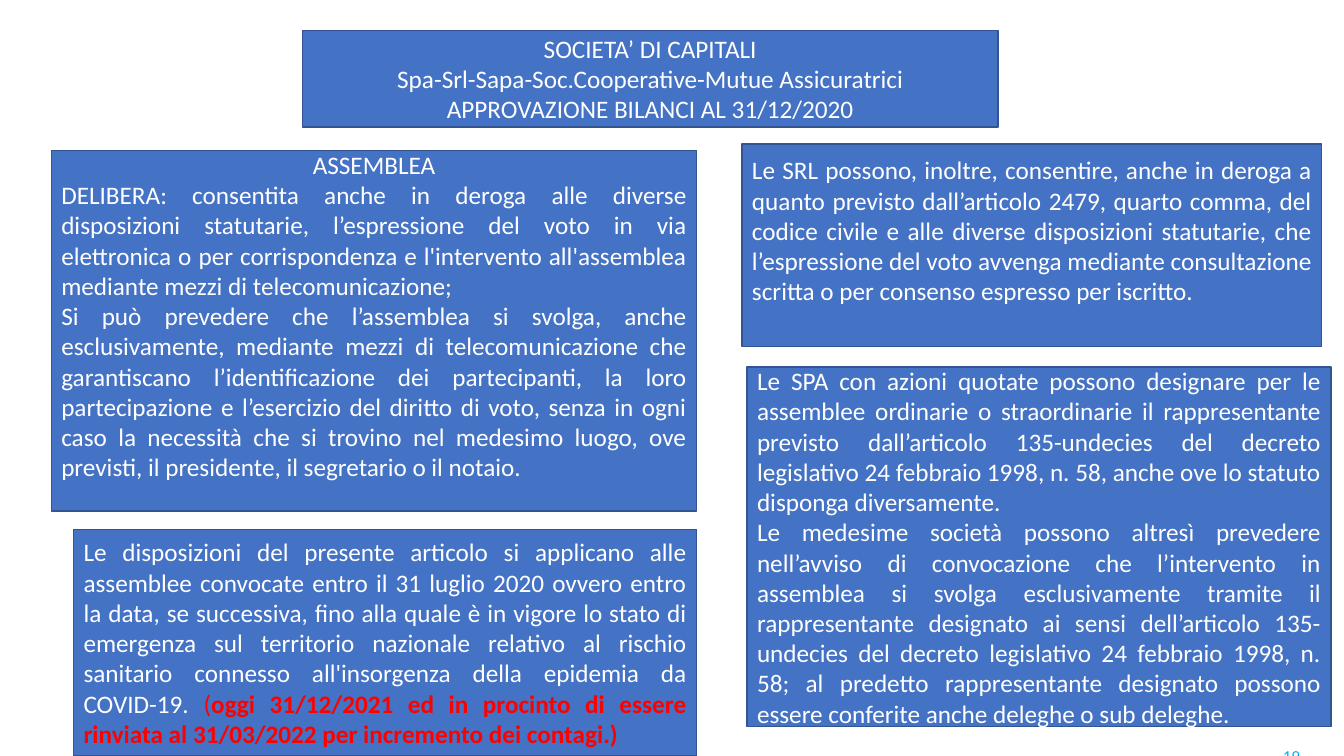
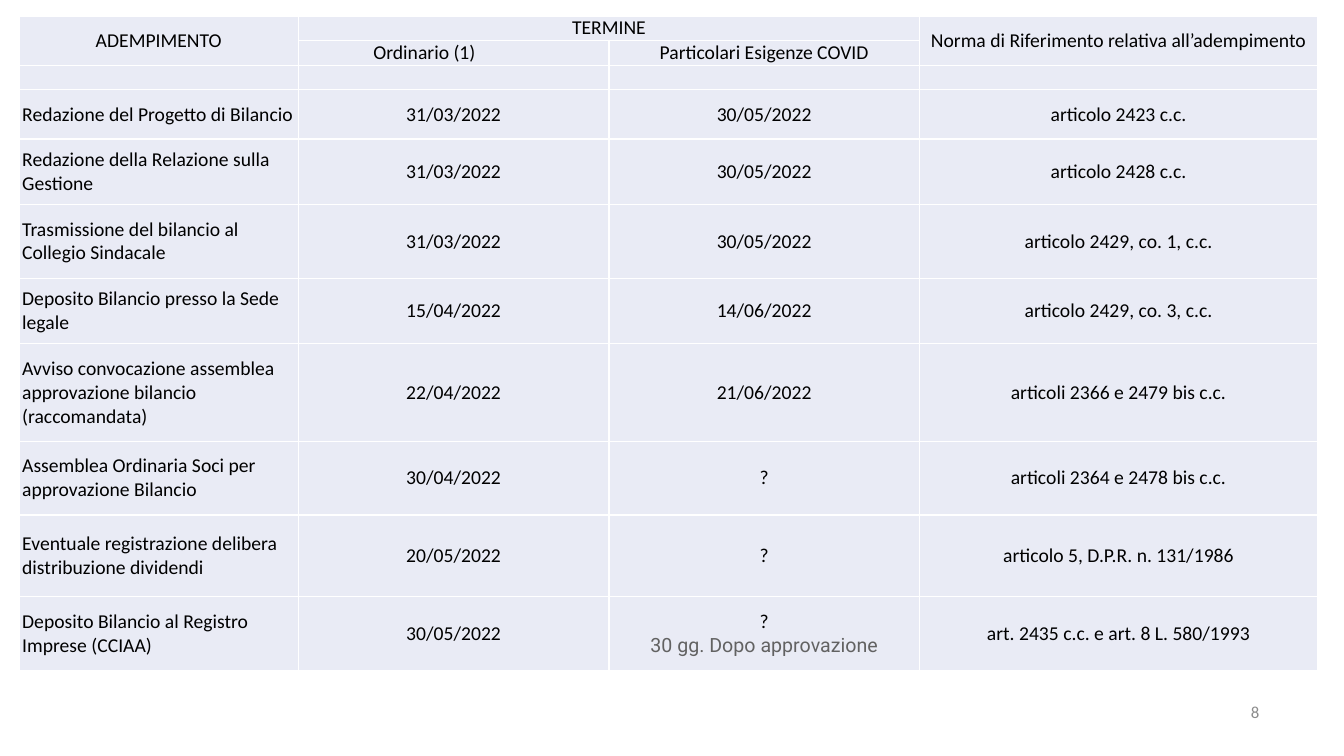
from dataclasses import dataclass

from lxml.etree import SubElement
from pptx import Presentation
from pptx.dml.color import RGBColor
from pptx.enum.shapes import MSO_SHAPE
from pptx.enum.text import MSO_ANCHOR, PP_ALIGN
from pptx.oxml.ns import qn
from pptx.slide import Slide
from pptx.table import Table, _Cell
from pptx.text.text import TextFrame, _Paragraph
from pptx.util import Inches, Pt

BLUE = "4472C4"
BLUE_EDGE = "325491"
WHITE = "FFFFFF"
BLACK = "000000"
RED = "FF0000"
CYAN = "00B0F0"
GREY = "8C8C8C"
NOTE_GREY = "626262"
CELL_FILL = "E9EBF5"
FONT = "Calibri"
TABLE_SIZE = 14

CENTER, JUSTIFY = PP_ALIGN.CENTER, PP_ALIGN.JUSTIFY
LEFT, RIGHT = PP_ALIGN.LEFT, PP_ALIGN.RIGHT


@dataclass(frozen=True)
class Span:
    text: str
    color: str = WHITE
    bold: bool = False


@dataclass(frozen=True)
class Para:
    spans: tuple[Span, ...]
    align: PP_ALIGN = JUSTIFY


@dataclass(frozen=True)
class Panel:
    left: float
    top: float
    width: float
    height: float
    paras: tuple[Para, ...]
    bottom_inset: float = 0.05


@dataclass(frozen=True)
class Deadline:
    task: str
    ordinary: str
    covid: str
    rule: str
    height: float
    covid_note: str = ""


def plain(text: str, align: PP_ALIGN = JUSTIFY) -> Para:
    return Para((Span(text),), align)


PANELS = (
    Panel(3, 0.3, 6.9, 0.96, (
        plain("SOCIETA’ DI CAPITALI", CENTER),
        plain("Spa-Srl-Sapa-Soc.Cooperative-Mutue Assicuratrici", CENTER),
        plain("APPROVAZIONE BILANCI AL 31/12/2020", CENTER),
    )),
    Panel(0.51, 1.49, 6.4, 3.58, (
        plain("ASSEMBLEA", CENTER),
        plain("DELIBERA: consentita anche in deroga alle diverse disposizioni "
              "statutarie, l’espressione del voto in via elettronica o per "
              "corrispondenza e l'intervento all'assemblea mediante mezzi di "
              "telecomunicazione;"),
        plain("Si può prevedere che l’assemblea si svolga, anche esclusivamente, "
              "mediante mezzi di telecomunicazione che garantiscano "
              "l’identificazione dei partecipanti, la loro partecipazione e "
              "l’esercizio del diritto di voto, senza in ogni caso la necessità "
              "che si trovino nel medesimo luogo, ove previsti, il presidente, "
              "il segretario o il notaio."),
    ), bottom_inset=0.35),
    Panel(7.36, 1.43, 5.75, 2.01, (
        plain("Le SRL possono, inoltre, consentire, anche in deroga a quanto "
              "previsto dall’articolo 2479, quarto comma, del codice civile e "
              "alle diverse disposizioni statutarie, che l’espressione del voto "
              "avvenga mediante consultazione scritta o per consenso espresso "
              "per iscritto."),
    ), bottom_inset=0.35),
    Panel(7.41, 3.64, 5.79, 3.57, (
        plain("Le SPA con azioni quotate possono designare per le assemblee "
              "ordinarie o straordinarie il rappresentante previsto "
              "dall’articolo 135-undecies del decreto legislativo 24 febbraio "
              "1998, n. 58, anche ove lo statuto disponga diversamente."),
        plain("Le medesime società possono altresì prevedere nell’avviso di "
              "convocazione che l’intervento in assemblea si svolga "
              "esclusivamente tramite il rappresentante designato ai sensi "
              "dell’articolo 135-undecies del decreto legislativo 24 febbraio "
              "1998, n. 58; al predetto rappresentante designato possono essere "
              "conferite anche deleghe o sub deleghe."),
    )),
    Panel(0.73, 5.25, 6.18, 2.25, (
        Para((
            Span("Le disposizioni del presente articolo si applicano alle "
                 "assemblee convocate entro il 31 luglio 2020 ovvero entro la "
                 "data, se successiva, fino alla quale è in vigore lo stato di "
                 "emergenza sul territorio nazionale relativo al rischio "
                 "sanitario connesso all'insorgenza della epidemia da COVID-19. "),
            Span("(", RED),
            Span("oggi 31/12/2021 ed in procinto di essere rinviata al "
                 "31/03/2022 per incremento dei contagi.)", RED, True),
        )),
    )),
)

COLUMN_WIDTHS = (2.77, 3.08, 3.08, 3.95)
HEADER_HEIGHTS = (0.24, 0.25, 0.24)
DEADLINES = (
    Deadline("Redazione del Progetto di Bilancio",
             "31/03/2022", "30/05/2022", "articolo 2423 c.c.", 0.49),
    Deadline("Redazione della Relazione sulla Gestione",
             "31/03/2022", "30/05/2022", "articolo 2428 c.c.", 0.65),
    Deadline("Trasmissione del bilancio al Collegio Sindacale",
             "31/03/2022", "30/05/2022", "articolo 2429, co. 1, c.c.", 0.73),
    Deadline("Deposito Bilancio presso la Sede legale",
             "15/04/2022", "14/06/2022", "articolo 2429, co. 3, c.c.", 0.65),
    Deadline("Avviso convocazione assemblea approvazione bilancio (raccomandata)",
             "22/04/2022", "21/06/2022", "articoli 2366 e 2479 bis c.c.", 0.97),
    Deadline("Assemblea Ordinaria Soci per approvazione Bilancio",
             "30/04/2022", "?", "articoli 2364 e 2478 bis c.c.", 0.73),
    Deadline("Eventuale registrazione delibera distribuzione dividendi",
             "20/05/2022", "?", "articolo 5, D.P.R. n. 131/1986", 0.81),
    Deadline("Deposito Bilancio al Registro Imprese (CCIAA)",
             "30/05/2022", "?", "art. 2435 c.c. e art. 8 L. 580/1993", 0.73,
             "30 gg. Dopo approvazione"),
)


def rgb(color: str) -> RGBColor:
    return RGBColor.from_string(color)


def write(paragraph: _Paragraph, text: str, *, size: float = 18,
          color: str = WHITE, font: str = FONT, bold: bool = False,
          align: PP_ALIGN = LEFT) -> None:
    paragraph.alignment = align
    run = paragraph.add_run()
    run.text = text
    run.font.name = font
    run.font.size = Pt(size)
    run.font.bold = bold
    run.font.color.rgb = rgb(color)


def paragraph_at(frame: TextFrame, index: int) -> _Paragraph:
    return frame.paragraphs[0] if index == 0 else frame.add_paragraph()


def draw_page_number(slide: Slide, number: str, left: float, top: float,
                     color: str) -> None:
    page = slide.shapes.add_textbox(Inches(left), Inches(top),
                                    Inches(0.89), Inches(0.55))
    page.text_frame.word_wrap = True
    page.text_frame.vertical_anchor = MSO_ANCHOR.MIDDLE
    write(page.text_frame.paragraphs[0], number, size=12, color=color, align=RIGHT)


def draw_panel(slide: Slide, panel: Panel) -> None:
    box = slide.shapes.add_shape(
        MSO_SHAPE.RECTANGLE, Inches(panel.left), Inches(panel.top),
        Inches(panel.width), Inches(panel.height))
    box.shadow.inherit = False
    box.fill.solid()
    box.fill.fore_color.rgb = rgb(BLUE)
    box.line.color.rgb = rgb(BLUE_EDGE)
    box.line.width = Pt(1)
    frame = box.text_frame
    frame.word_wrap = True
    frame.vertical_anchor = MSO_ANCHOR.MIDDLE
    frame.margin_bottom = Inches(panel.bottom_inset)
    for index, para in enumerate(panel.paras):
        paragraph = paragraph_at(frame, index)
        for span in para.spans:
            write(paragraph, span.text, color=span.color, bold=span.bold,
                  align=para.align)


def style_cell(cell: _Cell) -> None:
    properties = cell._tc.get_or_add_tcPr()
    for side in ("a:lnL", "a:lnR", "a:lnT", "a:lnB"):
        border = SubElement(properties, qn(side), w=str(Pt(1)))
        fill = SubElement(border, qn("a:solidFill"))
        SubElement(fill, qn("a:srgbClr"), val=WHITE)
    cell.fill.solid()
    cell.fill.fore_color.rgb = rgb(CELL_FILL)
    cell.vertical_anchor = MSO_ANCHOR.MIDDLE
    cell.margin_left = cell.margin_right = Inches(0)
    cell.margin_top = cell.margin_bottom = Inches(0)
    SubElement(cell.text_frame.paragraphs[0]._p, qn("a:endParaRPr"),
               sz=str(TABLE_SIZE * 100))


def fill_cell(cell: _Cell, text: str, align: PP_ALIGN = CENTER) -> None:
    write(cell.text_frame.paragraphs[0], text, size=TABLE_SIZE, color=BLACK,
          align=align)


def fill_header(table: Table) -> None:
    for first, last in (((0, 0), (1, 0)), ((0, 1), (0, 2)), ((0, 3), (1, 3))):
        table.cell(*first).merge(table.cell(*last))
    headings = {
        (0, 0): "ADEMPIMENTO",
        (0, 1): "TERMINE",
        (0, 3): "Norma di Riferimento relativa all’adempimento",
        (1, 1): "Ordinario (1)",
        (1, 2): "Particolari Esigenze COVID",
    }
    for place, heading in headings.items():
        fill_cell(table.cell(*place), heading)
    table.cell(1, 1).margin_right = Inches(0.58)


def draw_deadlines(slide: Slide) -> None:
    heights = HEADER_HEIGHTS + tuple(entry.height for entry in DEADLINES)
    table = slide.shapes.add_table(
        len(heights), len(COLUMN_WIDTHS), Inches(0.19), Inches(0.16),
        Inches(sum(COLUMN_WIDTHS)), Inches(sum(heights))).table
    table.first_row = False
    table.horz_banding = False
    for column, width in zip(table.columns, COLUMN_WIDTHS):
        column.width = Inches(width)
    for row, height in zip(table.rows, heights):
        row.height = Inches(height)
    for cell in table.iter_cells():
        style_cell(cell)
    fill_header(table)
    for row, entry in enumerate(DEADLINES, start=len(HEADER_HEIGHTS)):
        fill_cell(table.cell(row, 0), entry.task, LEFT)
        table.cell(row, 0).margin_left = Inches(0.03)
        for column, text in enumerate((entry.ordinary, entry.covid, entry.rule), 1):
            fill_cell(table.cell(row, column), text)
        if entry.covid_note:
            write(table.cell(row, 2).text_frame.add_paragraph(), entry.covid_note,
                  size=TABLE_SIZE, color=NOTE_GREY, font="Roboto", align=CENTER)


def main() -> None:
    deck = Presentation()
    deck.slide_width = Inches(13.33)
    deck.slide_height = Inches(7.5)
    blank = deck.slide_layouts[6]

    assembly = deck.slides.add_slide(blank)
    draw_page_number(assembly, "19", 12.1, 7.22, CYAN)
    for panel in PANELS:
        draw_panel(assembly, panel)

    calendar = deck.slides.add_slide(blank)
    draw_page_number(calendar, "8", 11.7, 6.79, GREY)
    draw_deadlines(calendar)

    deck.save("out.pptx")


if __name__ == "__main__":
    main()
